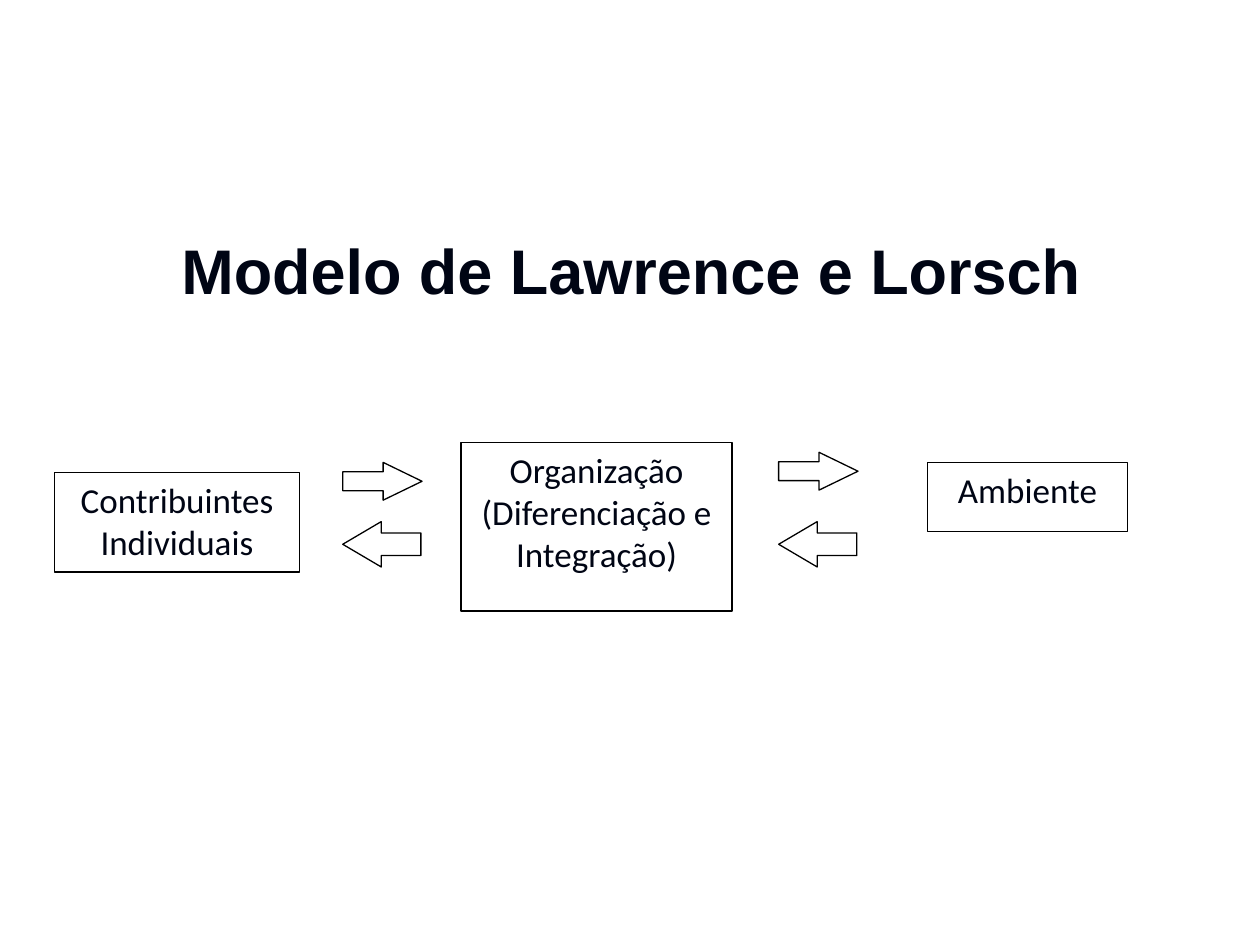
import pptx
import pptx.util
import pptx.dml.color
import pptx.enum.shapes
import pptx.enum.text

WIDTH, HEIGHT = 10, 7.5
INK, BLACK, WHITE = "000514", "000000", "FFFFFF"
SHAPES = pptx.enum.shapes.MSO_SHAPE
ANCHORS = pptx.enum.text.MSO_ANCHOR

TITLE = "Modelo de Lawrence e Lorsch"
BOXES = [
    ("Contribuintes Individuais", (0.43, 3.75, 1.95, 0.79)),
    ("Organização (Diferenciação e Integração)", (3.66, 3.51, 2.15, 1.34)),
    ("Ambiente", (7.36, 3.67, 1.59, 0.55)),
]
ARROW_COLUMNS = [(2.72, 3.67), (6.18, 3.59)]
RETURN_TOP = 4.14


def color(value):
    return pptx.dml.color.RGBColor.from_string(value)


def add_shape(slide, kind, area, line=BLACK):
    shape = slide.shapes.add_shape(kind, *map(pptx.util.Inches, area))
    shape.shadow.inherit = False
    shape.fill.solid()
    shape.fill.fore_color.rgb = color(WHITE)
    shape.line.color.rgb = color(line)
    shape.line.width = pptx.util.Pt(0.75)
    return shape


def write(shape, text, size=20, font="Calibri", bold=False, anchor=ANCHORS.TOP, after=10):
    frame = shape.text_frame
    frame.word_wrap = True
    frame.vertical_anchor = anchor
    paragraph = frame.paragraphs[0]
    paragraph.alignment = pptx.enum.text.PP_ALIGN.CENTER
    paragraph.space_after = pptx.util.Pt(after)
    run = paragraph.add_run()
    run.text = text
    run.font.size = pptx.util.Pt(size)
    run.font.name = font
    run.font.bold = bold
    run.font.color.rgb = color(INK)


def add_arrow(slide, kind, area, head):
    arrow = add_shape(slide, kind, area)
    arrow.adjustments[0] = 0.5
    arrow.adjustments[1] = head


def main():
    presentation = pptx.Presentation()
    presentation.slide_width = pptx.util.Inches(WIDTH)
    presentation.slide_height = pptx.util.Inches(HEIGHT)
    slide = presentation.slides.add_slide(presentation.slide_layouts[6])

    panel_top = 1.39
    add_shape(slide, SHAPES.RECTANGLE, (0, panel_top, WIDTH, HEIGHT - panel_top), line=WHITE)
    title = slide.shapes.add_textbox(*map(pptx.util.Inches, (0.51, 1.7, 9, 0.87)))
    write(title, TITLE, size=36, font="Arial", bold=True, anchor=ANCHORS.MIDDLE, after=0)

    for text, area in BOXES:
        write(add_shape(slide, SHAPES.RECTANGLE, area), text)

    for left, top in ARROW_COLUMNS:
        add_arrow(slide, SHAPES.RIGHT_ARROW, (left, top, 0.63, 0.3), 1.03)
        add_arrow(slide, SHAPES.LEFT_ARROW, (left, RETURN_TOP, 0.62, 0.36), 0.85)

    presentation.save("out.pptx")


if __name__ == "__main__":
    main()
